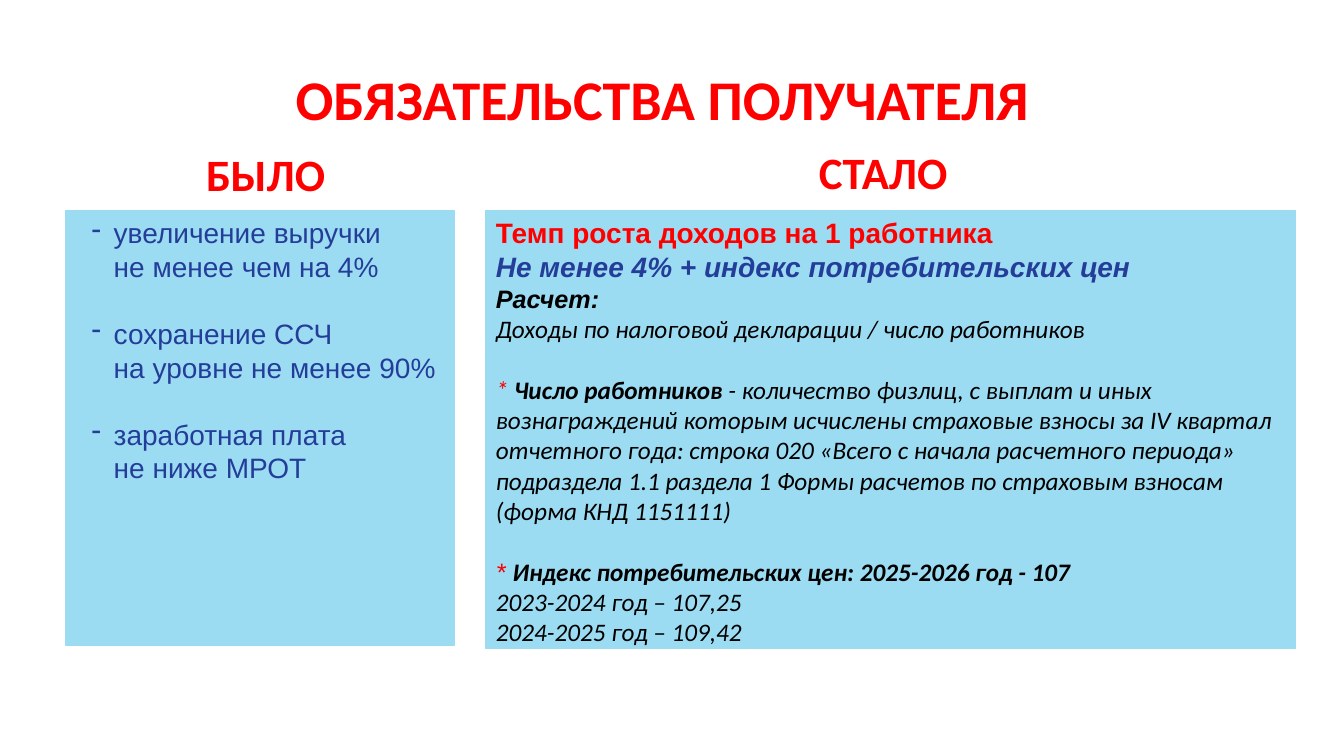
from dataclasses import dataclass

from lxml import etree
from pptx import Presentation
from pptx.dml.color import RGBColor
from pptx.enum import shapes, text
from pptx.oxml import ns
from pptx.util import Inches, Pt


@dataclass(frozen=True)
class Theme:
    red: str = "FF0000"
    star: str = "FA0000"
    blue: str = "243D99"
    black: str = "000000"
    panel: str = "9BDCF3"
    title: int = 40
    heading: int = 32
    lead: int = 20
    body: int = 18


theme = Theme()


def set_font(font, name, size, color, bold=False, italic=False):
    font.name, font.size, font.bold, font.italic = name, Pt(size), bold, italic
    font.color.rgb = RGBColor.from_string(color)


def add_panel(left, width, height):
    """Add a light blue panel and return its text frame."""
    panel = slide.shapes.add_shape(shapes.MSO_SHAPE.RECTANGLE, Inches(left), Inches(2.09),
                                   Inches(width), Inches(height))
    panel.shadow.inherit = False
    panel.fill.solid()
    panel.fill.fore_color.rgb = RGBColor.from_string(theme.panel)
    panel.line.color.rgb = RGBColor.from_string(theme.panel)
    panel.line.width = Pt(0.75)
    panel.text_frame.word_wrap = True
    panel.text_frame.vertical_anchor = text.MSO_ANCHOR.TOP
    return panel.text_frame


presentation = Presentation()
presentation.slide_width, presentation.slide_height = Inches(13.33), Inches(7.5)
slide = presentation.slides.add_slide(presentation.slide_layouts[5])

title = slide.shapes.title
title.left, title.top, title.width, title.height = map(Inches, (0.37, 0.59, 12.52, 0.77))
title.text_frame.text = "ОБЯЗАТЕЛЬСТВА ПОЛУЧАТЕЛЯ "
title.text_frame.vertical_anchor = text.MSO_ANCHOR.TOP
title.text_frame.paragraphs[0].alignment = text.PP_ALIGN.CENTER
set_font(title.text_frame.paragraphs[0].font, "Calibri", theme.title, theme.red, bold=True)

headings = [("БЫЛО", 1.94, 1.41, 1.39), ("СТАЛО", 8, 1.39, 1.52)]
for caption, left, top, width in headings:
    heading = slide.shapes.add_textbox(Inches(left), Inches(top), Inches(width), Inches(0.64))
    paragraph = heading.text_frame.paragraphs[0]
    paragraph.text = caption
    paragraph.alignment = text.PP_ALIGN.CENTER
    set_font(paragraph.font, "Calibri", theme.heading, theme.red, bold=True)

# Former obligations
before = add_panel(0.65, 3.86, 4.31)
obligations = [
    "увеличение выручки\vне менее чем на 4%",
    "сохранение ССЧ\vна уровне не менее 90%",
    "заработная плата\vне ниже МРОТ",
]
for index, obligation in enumerate(obligations):
    paragraph = before.add_paragraph() if index else before.paragraphs[0]
    paragraph.text = obligation
    paragraph.alignment = text.PP_ALIGN.LEFT
    if index:
        paragraph.space_before = Pt(24)
    properties = paragraph._p.get_or_add_pPr()
    properties.set("marL", str(Inches(0.38)))
    properties.set("indent", str(Inches(-0.22)))
    etree.SubElement(properties, ns.qn("a:buChar"), char="-")
    set_font(paragraph.font, "Arial", theme.lead, theme.blue)

# New obligations: space before, then runs of (text, font, size, colour, bold, italic)
plain = ("Calibri", theme.body, theme.black, False, True)
strong = ("Calibri", theme.body, theme.black, True, True)
terms = [
    (0, [("Темп роста доходов на 1 работника", "Arial", theme.lead, theme.red, True, False)]),
    (0, [("Не менее 4% + индекс потребительских цен", "Arial", theme.lead, theme.blue, True, True)]),
    (0, [("Расчет:", "Arial", theme.body, theme.black, True, True)]),
    (0, [("Доходы по налоговой декларации / число работников", *plain)]),
    (22, [("* ", "Calibri", theme.body, theme.star, False, True),
          ("Число работников ", *strong),
          ("- количество физлиц, с выплат и иных вознаграждений которым исчислены страховые "
           "взносы за IV квартал отчетного года: строка 020 «Всего с начала расчетного периода» "
           "подраздела 1.1 раздела 1 Формы расчетов по страховым взносам "
           "(форма КНД 1151111)", *plain)]),
    (22, [("* ", "Arial", theme.body, theme.star, False, True),
          ("Индекс потребительских цен: 2025-2026 год - 107", *strong)]),
    (0, [("2023-2024 год – 107,25", *plain)]),
    (0, [("2024-2025 год – 109,42", *plain)]),
]
after = add_panel(4.82, 8.03, 4.34)
for index, (gap, runs) in enumerate(terms):
    paragraph = after.add_paragraph() if index else after.paragraphs[0]
    paragraph.alignment = text.PP_ALIGN.LEFT
    if gap:
        paragraph.space_before = Pt(gap)
    for words, *style in runs:
        run = paragraph.add_run()
        run.text = words
        set_font(run.font, *style)

presentation.save("out.pptx")
